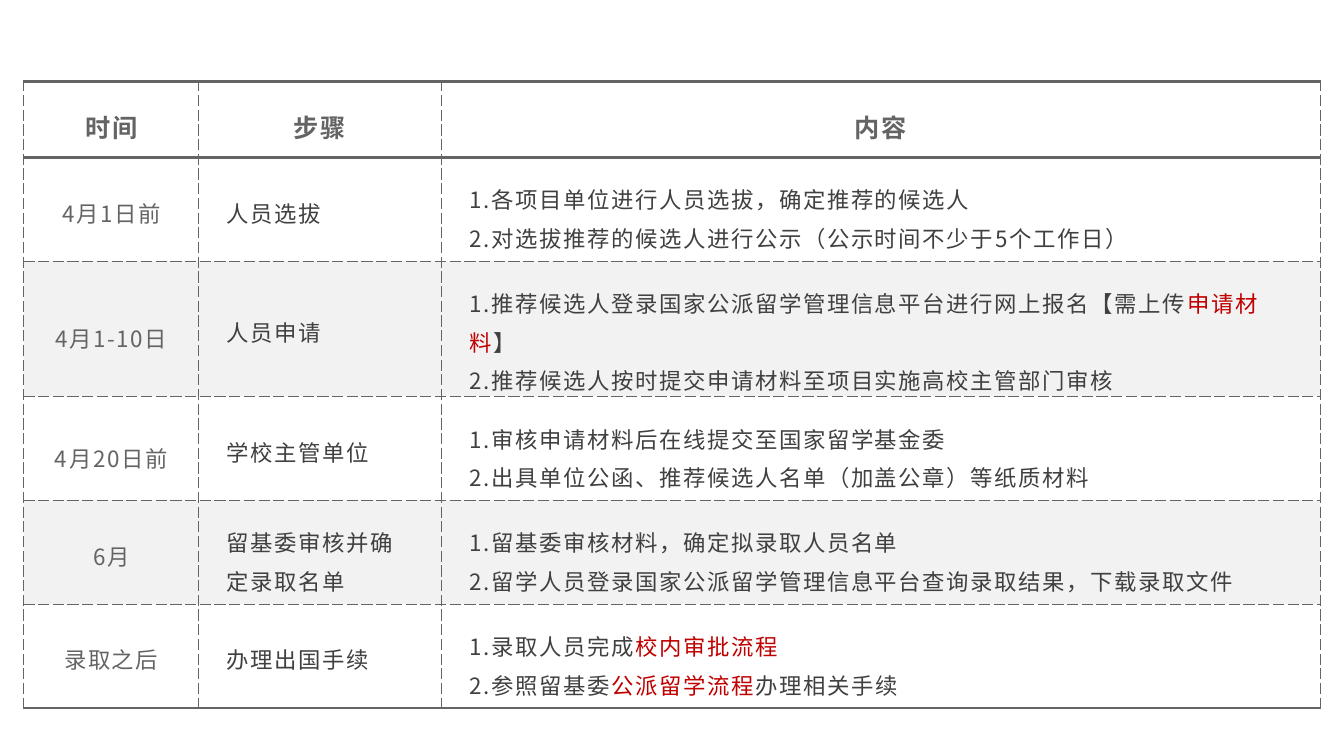
"""Build a slide with the yearly schedule of the study-abroad selection."""
from dataclasses import dataclass

from lxml.etree import SubElement
from pptx import Presentation
from pptx.dml.color import RGBColor
from pptx.enum.text import MSO_ANCHOR, PP_ALIGN
from pptx.oxml import parse_xml
from pptx.oxml.ns import nsdecls, qn
from pptx.table import _Cell
from pptx.util import Pt

FONT = "Noto Sans CJK SC"
GREY, DARK, RED, WHITE, BAND = "646464", "404040", "C00000", "FFFFFF", "F2F2F2"
COL_WIDTHS = (124.9, 173.5, 627.5)
HEADER_HEIGHT, ROW_HEIGHT = 54, 74.2
THICK, THIN = 2.25, 0.75
TOP_MARGIN, SIDE_MARGIN = 13.7, 20
HEADER_BOTTOM = 9
BOTTOM_BY_LINES = {1: TOP_MARGIN, 2: 5, 3: 0}


@dataclass(frozen=True)
class Step:
    """One row of the schedule; asterisks enclose red words."""
    time: str
    name: str
    content: tuple[str, ...]
    line_counts: tuple[int, int, int] = (1, 1, 2)


@dataclass(frozen=True)
class TextStyle:
    """Look of the text in a cell."""
    size: float
    color: str
    spacing: int
    align: PP_ALIGN
    bold: bool = False


HEAD = TextStyle(18, GREY, 130, PP_ALIGN.CENTER, True)
TIME = TextStyle(16, GREY, 120, PP_ALIGN.CENTER)
BODY = TextStyle(16, DARK, 120, PP_ALIGN.LEFT)

HEADINGS = ("时间", "步骤", "内容")
STEPS = (
    Step("4月1日前", "人员选拔", (
        "1.各项目单位进行人员选拔，确定推荐的候选人",
        "2.对选拔推荐的候选人进行公示（公示时间不少于5个工作日）")),
    Step("4月1-10日", "人员申请", (
        "1.推荐候选人登录国家公派留学管理信息平台进行网上报名【需上传*申请材料*】",
        "2.推荐候选人按时提交申请材料至项目实施高校主管部门审核"), (2, 1, 3)),
    Step("4月20日前", "学校主管单位", (
        "1.审核申请材料后在线提交至国家留学基金委",
        "2.出具单位公函、推荐候选人名单（加盖公章）等纸质材料"), (2, 1, 2)),
    Step("6月", "留基委审核并确定录取名单", (
        "1.留基委审核材料，确定拟录取人员名单",
        "2.留学人员登录国家公派留学管理信息平台查询录取结果，下载录取文件"),
        (1, 2, 2)),
    Step("录取之后", "办理出国手续", (
        "1.录取人员完成*校内审批流程*",
        "2.参照留基委*公派留学流程*办理相关手续")),
)


def rgb(color: str) -> RGBColor:
    """Turn a hex string into a colour."""
    return RGBColor.from_string(color)


def set_borders(cell: _Cell, top: float, bottom: float) -> None:
    """Draw thin borders dashed and thick ones solid."""
    tc_pr = cell._tc.get_or_add_tcPr()
    widths = {"lnL": THIN, "lnR": THIN, "lnT": top, "lnB": bottom}
    for i, (tag, width) in enumerate(widths.items()):
        dash = "sysDash" if width == THIN else "solid"
        tc_pr.insert(i, parse_xml(
            f'<a:{tag} {nsdecls("a")} w="{Pt(width)}"><a:solidFill>'
            f'<a:srgbClr val="{GREY}"/></a:solidFill>'
            f'<a:prstDash val="{dash}"/></a:{tag}>'))


def write_text(cell: _Cell, lines: tuple[str, ...], style: TextStyle) -> None:
    """Write one paragraph per line, with the marked words in red."""
    tf = cell.text_frame
    for i, line in enumerate(lines):
        p = tf.add_paragraph() if i else tf.paragraphs[0]
        p.alignment = style.align
        p.line_spacing = 1.2
        p.font.size = Pt(style.size)
        p.font.bold = style.bold
        p.font.name = FONT
        for j, part in enumerate(line.split("*")):
            if not part:
                continue
            r = p.add_run()
            r.text = part
            r.font.color.rgb = rgb(RED if j % 2 else style.color)
            r_pr = r._r.get_or_add_rPr()
            r_pr.set("spc", str(style.spacing))
            SubElement(r_pr, qn("a:ea")).set("typeface", FONT)


def fill_cell(cell: _Cell, lines: tuple[str, ...], style: TextStyle,
              row: int, bottom_margin: float) -> None:
    """Set the text, margins, fill and borders of a cell."""
    cell.vertical_anchor = MSO_ANCHOR.MIDDLE
    cell.margin_left = cell.margin_right = Pt(SIDE_MARGIN)
    cell.margin_top, cell.margin_bottom = Pt(TOP_MARGIN), Pt(bottom_margin)
    cell.fill.solid()
    cell.fill.fore_color.rgb = rgb(BAND if row and row % 2 == 0 else WHITE)
    set_borders(cell, THICK if row < 2 else THIN,
                THICK if row in (0, len(STEPS)) else THIN)
    write_text(cell, lines, style)


def main() -> None:
    """Build and save the slide."""
    prs = Presentation()
    prs.slide_width, prs.slide_height = Pt(960), Pt(540)
    s = prs.slides.add_slide(prs.slide_layouts[6])
    height = HEADER_HEIGHT + ROW_HEIGHT * len(STEPS)
    table = s.shapes.add_table(
        len(STEPS) + 1, len(COL_WIDTHS), Pt(17), Pt(58.3),
        Pt(sum(COL_WIDTHS)), Pt(height)).table
    table.horz_banding = False
    for column, width in zip(table.columns, COL_WIDTHS):
        column.width = Pt(width)
    for i, row in enumerate(table.rows):
        row.height = Pt(ROW_HEIGHT if i else HEADER_HEIGHT)
    for col, heading in enumerate(HEADINGS):
        fill_cell(table.cell(0, col), (heading,), HEAD, 0, HEADER_BOTTOM)
    for row, step in enumerate(STEPS, 1):
        texts = ((step.time,), (step.name,), step.content)
        cells = zip(texts, (TIME, BODY, BODY), step.line_counts)
        for col, (lines, style, count) in enumerate(cells):
            fill_cell(table.cell(row, col), lines, style, row,
                      BOTTOM_BY_LINES[count])
    prs.save("out.pptx")


if __name__ == "__main__":
    main()
